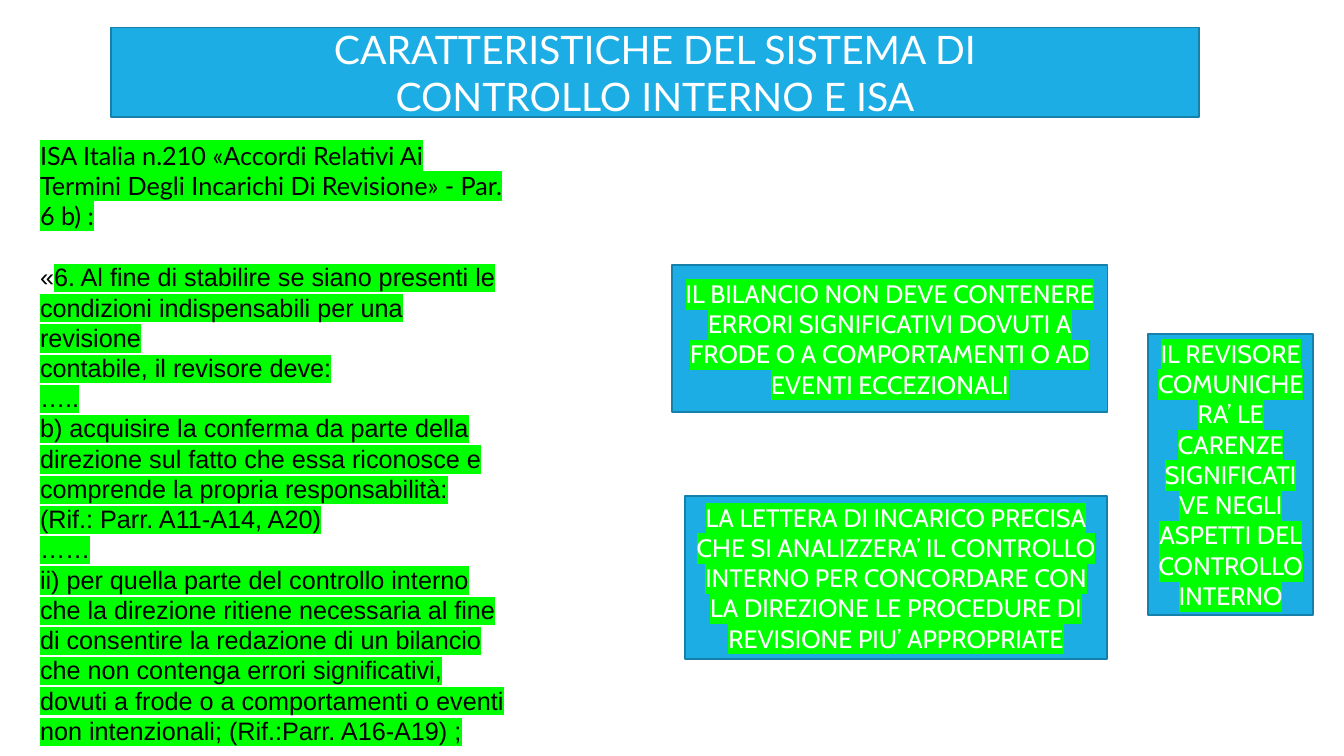
from lxml import etree
from pptx import Presentation
from pptx.dml.color import RGBColor
from pptx.enum.shapes import MSO_SHAPE
from pptx.enum.text import MSO_ANCHOR, MSO_AUTO_SIZE, PP_ALIGN
from pptx.oxml.ns import qn
from pptx.util import Cm, Pt

RECTANGLE = MSO_SHAPE.RECTANGLE
MIDDLE, TOP = MSO_ANCHOR.MIDDLE, MSO_ANCHOR.TOP
CENTER, LEFT = PP_ALIGN.CENTER, PP_ALIGN.LEFT
NO_FIT, GROW = MSO_AUTO_SIZE.NONE, MSO_AUTO_SIZE.SHAPE_TO_FIT_TEXT
BLUE = RGBColor(0x1C, 0xAD, 0xE4)
DARK_BLUE = RGBColor(0x15, 0x80, 0xA9)
WHITE = RGBColor(0xFF, 0xFF, 0xFF)
BLACK = RGBColor(0x00, 0x00, 0x00)
GREEN = RGBColor(0x00, 0xFF, 0x00)


def add_span(para, text, color, highlight=None, **font_format):
    span = para.add_run()
    span.text = text
    span.font.color.rgb = color
    for name, value in font_format.items():
        setattr(span.font, name, value)
    if highlight is not None:
        mark = etree.Element(qn("a:highlight"))
        etree.SubElement(mark, qn("a:srgbClr"), val=str(highlight))
        span.font.fill._xPr.find(qn("a:solidFill")).addnext(mark)


def format_box(box, fit, anchor):
    frame_format = {
        "word_wrap": True, "auto_size": fit, "vertical_anchor": anchor,
        "margin_left": Cm(0.25), "margin_right": Cm(0.25),
        "margin_top": Cm(0.13), "margin_bottom": Cm(0.13),
    }
    for name, value in frame_format.items():
        setattr(box.text_frame, name, value)
    if anchor == MIDDLE:
        box.fill.solid()
        box.fill.fore_color.rgb = BLUE
        box.line.color.rgb = DARK_BLUE
        box.line.width = Pt(1.25)


deck = Presentation()
deck.slide_width, deck.slide_height = Cm(33.87), Cm(19.05)
page = deck.slides.add_slide(deck.slide_layouts[5])

# Title band
title = page.shapes.title
title.left, title.top, title.width, title.height = Cm(2.79), Cm(0.69), Cm(27.43), Cm(2.26)
format_box(title, NO_FIT, MIDDLE)
title_lines = ["CARATTERISTICHE DEL SISTEMA DI", "CONTROLLO INTERNO E ISA"]
for index, line in enumerate(title_lines):
    para = title.text_frame.add_paragraph() if index else title.text_frame.paragraphs[0]
    para.alignment = CENTER
    add_span(para, line, WHITE, name="Lato", size=Pt(28))

# Quoted standard: heading, then the passage
quote = page.shapes.add_textbox(Cm(0.76), Cm(3.4), Cm(12.19), Cm(14.1))
format_box(quote, GROW, TOP)
heading = quote.text_frame.paragraphs[0]
heading.alignment = LEFT
add_span(heading, "ISA Italia n.210 «Accordi Relativi Ai Termini Degli Incarichi Di Revisione» - Par. 6 b) :",
         BLACK, GREEN, name="Lato", size=Pt(18))
passage = [
    "6. Al fine di stabilire se siano presenti le condizioni indispensabili per una revisione",
    "contabile, il revisore deve:",
    "…..",
    "b) acquisire la conferma da parte della direzione sul fatto che essa riconosce e",
    "comprende la propria responsabilità: (Rif.: Parr. A11-A14, A20)",
    "……",
    "ii) per quella parte del controllo interno che la direzione ritiene necessaria al fine "
    "di consentire la redazione di un bilancio che non contenga errori significativi, dovuti "
    "a frode o a comportamenti o eventi non intenzionali; (Rif.:Parr. A16-A19) ;",
]
for index, text in enumerate(passage):
    para = quote.text_frame.add_paragraph()
    para.alignment = LEFT
    if index == 0:
        para.space_before = Pt(22)
        add_span(para, "«", BLACK, name="Arial", size=Pt(18))
    add_span(para, text, BLACK, GREEN, name="Arial", size=Pt(18))

# Consequences: left, top, width, height in cm, and text
consequences = [
    (16.94, 6.68, 10.97, 3.71,
     "IL BILANCIO NON DEVE CONTENERE ERRORI SIGNIFICATIVI DOVUTI A FRODE O A "
     "COMPORTAMENTI O AD EVENTI ECCEZIONALI"),
    (17.27, 12.5, 10.62, 4.11,
     "LA LETTERA DI INCARICO PRECISA CHE SI ANALIZZERA’ IL CONTROLLO INTERNO PER "
     "CONCORDARE CON LA DIREZIONE LE PROCEDURE DI REVISIONE PIU’ APPROPRIATE"),
    (28.93, 8.41, 4.17, 7.09,
     "IL REVISORE COMUNICHERA’ LE CARENZE SIGNIFICATIVE NEGLI ASPETTI DEL "
     "CONTROLLO INTERNO"),
]
for left, top, width, height, text in consequences:
    box = page.shapes.add_shape(RECTANGLE, Cm(left), Cm(top), Cm(width), Cm(height))
    box.shadow.inherit = False
    format_box(box, NO_FIT, MIDDLE)
    para = box.text_frame.paragraphs[0]
    para.alignment = CENTER
    add_span(para, text, WHITE, GREEN, name="Cabin", size=Pt(18))

deck.save("out.pptx")
